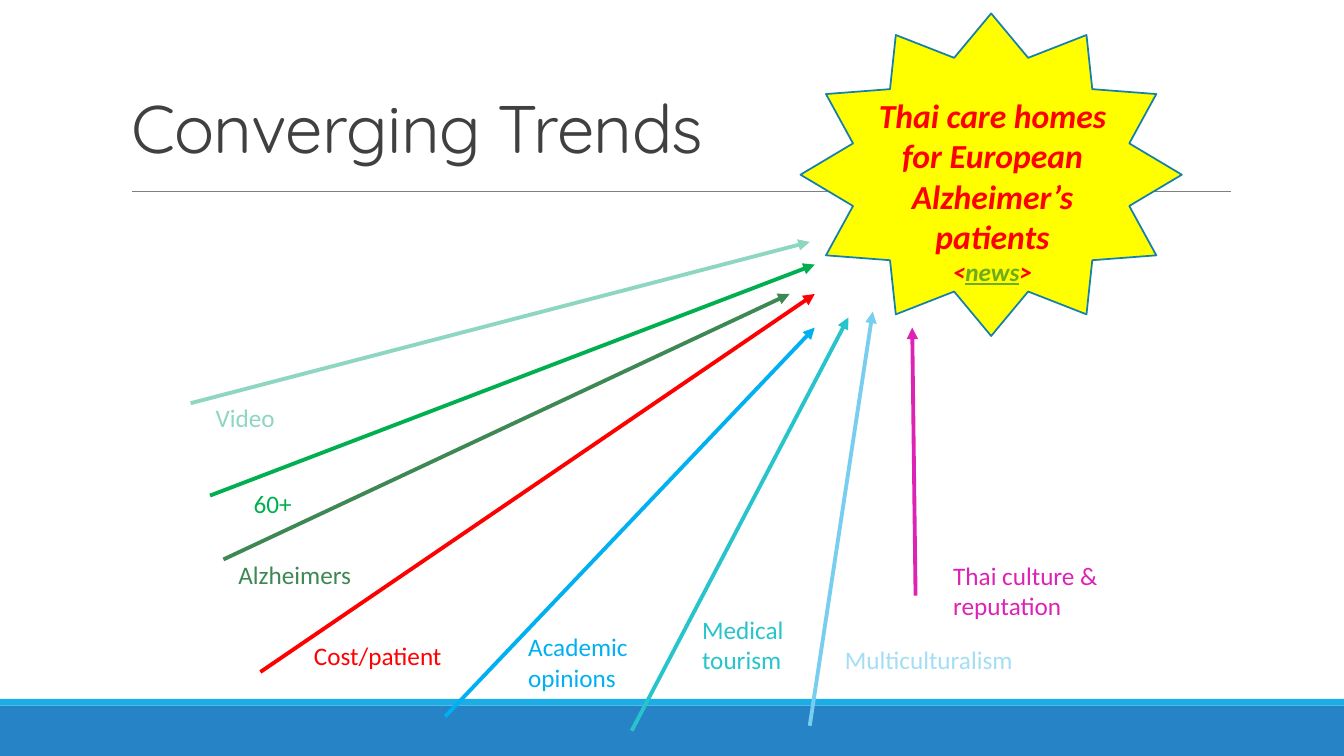
from dataclasses import dataclass

from lxml.etree import SubElement
from pptx import Presentation
from pptx.dml.color import RGBColor
from pptx.enum.dml import MSO_THEME_COLOR
from pptx.enum.shapes import MSO_CONNECTOR as Connector, MSO_SHAPE as Preset
from pptx.enum.text import MSO_ANCHOR as Anchor, MSO_AUTO_SIZE as AutoSize, PP_ALIGN as Align
from pptx.oxml.ns import qn
from pptx.util import Inches, Pt

COLUMNS, ROWS = 160, 90
UNIT = Inches(1) // 12


@dataclass(frozen=True)
class Theme:
    """Colours, fonts and sizes of the slide."""
    title_font: str = "Quicksand"
    body_font: str = "Calibri"
    title_size: int = 48
    callout_size: int = 24
    label_size: int = 18
    arrow_width: float = 2.75
    title: str = "404040"
    rule: str = "808080"
    footer: str = "2683C6"
    footer_edge: str = "1CADE4"
    star: str = "FFFF00"
    star_edge: str = "1580A9"
    callout: str = "FF0000"
    news: str = "6EAC1C"


@dataclass(frozen=True)
class Box:
    """A rectangle in grid columns and rows."""
    left: float
    top: float
    width: float
    height: float

    def inner(self, left, top, width, height):
        """Return a box placed relative to this one."""
        return Box(self.left + left, self.top + top, width, height)

    def emu(self):
        """Return left, top, width and height in slide lengths."""
        return [round(value * UNIT) for value in (self.left, self.top, self.width, self.height)]


@dataclass(frozen=True)
class Trend:
    """An arrow from start to end, with its label box and colours."""
    text: str
    color: str
    start: tuple
    end: tuple
    label: tuple
    label_color: str = ""


THEME = Theme()
TRENDS = [
    Trend("Cost/patient", "FF0000", (31, 56), (97, 11), (36.2, 51.7, 22, 4.8)),
    Trend("60+", "00B050", (25, 35), (97, 7.5), (29, 33.5, 8, 4.8)),
    Trend("Alzheimers", "3E8853", (26.6, 42.6), (94, 11), (27.2, 42, 20, 4.8)),
    Trend("Academic opinions", "00B0F0", (53, 61.3), (97, 15), (61.7, 50.6, 22, 8.5)),
    Trend("Medical tourism", "28C4CC", (75.2, 63), (101, 13.8), (82.4, 48.5, 15.7, 8.5)),
    Trend("Video", "8DD6C1", (22.7, 24), (96.4, 4.8), (24.5, 23.3, 13, 4.8)),
    Trend("Multiculturalism", "77CEEF", (96.4, 62.4), (103.9, 13.1), (99.4, 52.1, 25.6, 4.8), "A4DEF4"),
    Trend("Thai culture & reputation", "DD23B5", (109, 46.9), (108.6, 15), (112.3, 42.1, 25.6, 8.5)),
]


def style_font(font, name, size, color):
    """Set the face, size and colour of a font."""
    font.name, font.size = name, Pt(size)
    font.color.rgb = RGBColor.from_string(color)


def add_block(slide, preset, box, fill, edge=None):
    """Add a filled shape, with an outline if an edge colour is given."""
    shape = slide.shapes.add_shape(preset, *box.emu())
    shape.shadow.inherit = False
    shape.fill.solid()
    shape.fill.fore_color.rgb = RGBColor.from_string(fill)
    if edge:
        shape.line.color.rgb = RGBColor.from_string(edge)
        shape.line.width = Pt(1.25)
    else:
        shape.line.fill.background()


def add_line(slide, box, start, end, color, width):
    """Add a straight line between two grid points of a box."""
    ends = [round(value * UNIT) for column, row in (start, end)
            for value in (box.left + column, box.top + row)]
    line = slide.shapes.add_connector(Connector.STRAIGHT, *ends)
    line.line.color.rgb = RGBColor.from_string(color)
    line.line.width = Pt(width)
    SubElement(line._element.spPr, qn("a:effectLst"))
    return line


def add_text(slide, box):
    """Add a wrapping text box and return its text frame."""
    frame = slide.shapes.add_textbox(*box.emu()).text_frame
    frame.word_wrap = True
    frame.auto_size = AutoSize.SHAPE_TO_FIT_TEXT
    return frame


def draw_footer(slide, box):
    """Draw the footer band under its thin bright edge."""
    edge = 0.8
    add_block(slide, Preset.RECTANGLE, box.inner(0, edge, box.width, box.height - edge), THEME.footer)
    add_block(slide, Preset.RECTANGLE, box.inner(0, 0, box.width, edge), THEME.footer_edge)


def draw_header(slide, box, text):
    """Place the title and the rule beneath it."""
    title = slide.shapes.title
    title.left, title.top, title.width, title.height = box.inner(0, 0, 77, 10.5).emu()
    frame = title.text_frame
    frame.text = text
    frame.auto_size = AutoSize.NONE
    frame.vertical_anchor = Anchor.BOTTOM
    paragraph = frame.paragraphs[0]
    paragraph.alignment = Align.LEFT
    paragraph.line_spacing = 0.85
    style_font(paragraph.font, THEME.title_font, THEME.title_size, THEME.title)
    paragraph.runs[0]._r.get_or_add_rPr().set("spc", "-50")
    add_line(slide, box, (1.3, box.height), (box.width, box.height), THEME.rule, 0.5)


def draw_trends(slide, box, trends):
    """Draw each trend's arrow and label."""
    for trend in trends:
        arrow = add_line(slide, box, trend.start, trend.end, trend.color, THEME.arrow_width)
        SubElement(arrow._element.spPr.find(qn("a:ln")), qn("a:tailEnd"), type="triangle")
        frame = add_text(slide, box.inner(*trend.label))
        frame.text = trend.text
        style_font(frame.paragraphs[0].font, THEME.body_font, THEME.label_size,
                   trend.label_color or trend.color)


def draw_callout(slide, box, lines, source):
    """Draw the star with its message and the source word."""
    add_block(slide, Preset.STAR_12_POINT, box, THEME.star, THEME.star_edge)
    frame = add_text(slide, box.inner(4.9, 9.1, 35.9, 24.2))
    frame.text = "\n".join(lines)
    for paragraph in frame.paragraphs:
        paragraph.alignment = Align.CENTER
        style_font(paragraph.font, THEME.body_font, THEME.callout_size, THEME.callout)
        paragraph.font.bold = paragraph.font.italic = True
    paragraph.add_line_break()
    for text in ("<", source, ">"):
        run = paragraph.add_run()
        run.text = text
        run.font.size = Pt(THEME.label_size)
        if text == source:
            run.font.color.rgb = RGBColor.from_string(THEME.news)
            run.font.underline = True


def main():
    """Build the slide and save it."""
    presentation = Presentation()
    presentation.slide_width, presentation.slide_height = COLUMNS * UNIT, ROWS * UNIT
    slide = presentation.slides.add_slide(presentation.slide_layouts[5])
    slide.background.fill.solid()
    slide.background.fill.fore_color.theme_color = MSO_THEME_COLOR.BACKGROUND_1
    draw_footer(slide, Box(0, 83.2, COLUMNS, 6.8))
    draw_header(slide, Box(14.4, 10, 132.1, 12.8), "Converging Trends")
    draw_trends(slide, Box(0, 24, COLUMNS, 66), TRENDS)
    draw_callout(slide, Box(95.3, 1.6, 45.4, 38.4),
                 ["Thai care homes", "for European", "Alzheimer’s", "patients"], "news")
    presentation.save("out.pptx")


if __name__ == "__main__":
    main()
